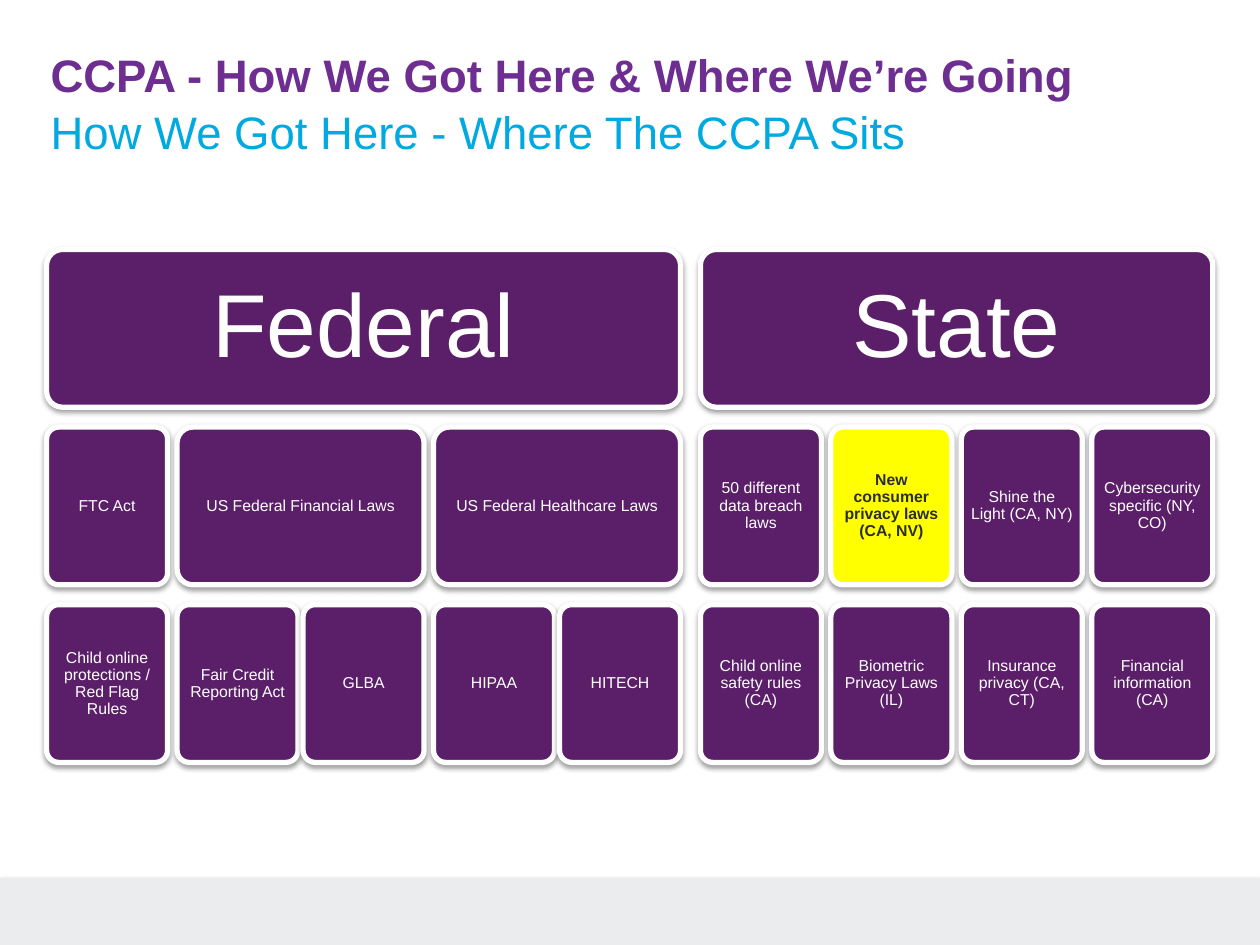
from dataclasses import dataclass

from lxml.etree import SubElement
from pptx import Presentation
from pptx.dml.color import RGBColor
from pptx.enum.shapes import MSO_SHAPE as SHAPE
from pptx.enum.text import MSO_ANCHOR as ANCHOR, PP_ALIGN as ALIGN
from pptx.oxml.ns import qn
from pptx.util import Cm, Pt

PURPLE, YELLOW, WHITE, DARK = "5B1F69", "FFFF00", "FFFFFF", "2B2D2E"
LEFT, TOP = 0.94, 5.03
TILE_W, TILE_H, ROW_PITCH = 2.44, 3.18, 3.58
COLUMN_GAPS = [0.19, 0.1, 0.19, 0.1, 0.4, 0.19, 0.19, 0.19]
COLUMN_X = [LEFT + i * TILE_W + sum(COLUMN_GAPS[:i]) for i in range(len(COLUMN_GAPS) + 1)]


@dataclass
class Tile:
    text: str
    row: int
    col: int
    span: int = 1
    size: int = 9
    inset: float = 0.1
    fill: str = PURPLE
    color: str = WHITE
    bold: bool = False


TILES = [
    Tile("Federal", 0, 0, 5, size=51, inset=0.53),
    Tile("State", 0, 5, 4, size=51, inset=0.53),
    Tile("FTC Act", 1, 0),
    Tile("US Federal Financial Laws", 1, 1, 2),
    Tile("US Federal Healthcare Laws", 1, 3, 2),
    Tile("50 different data breach laws", 1, 5),
    Tile("New consumer privacy laws (CA, NV)", 1, 6, fill=YELLOW, color=DARK, bold=True),
    Tile("Shine the Light (CA, NY)", 1, 7),
    Tile("Cybersecurity specific (NY, CO)", 1, 8),
] + [
    Tile(text, 2, col)
    for col, text in enumerate([
        "Child online protections / Red Flag Rules",
        "Fair Credit Reporting Act",
        "GLBA",
        "HIPAA",
        "HITECH",
        "Child online safety rules (CA)",
        "Biometric Privacy Laws (IL)",
        "Insurance privacy (CA, CT)",
        "Financial information (CA)",
    ])
]


def rgb(value: str) -> RGBColor:
    return RGBColor.from_string(value)


def add_shadow(sp, distance: float, opacity: int) -> None:
    sp.shadow.inherit = False
    effects = sp._element.spPr.find(qn("a:effectLst"))
    shadow = SubElement(effects, qn("a:outerShdw"), blurRad=str(Pt(3.1)),
                        dist=str(Pt(distance)), dir="5400000", rotWithShape="0")
    color = SubElement(shadow, qn("a:srgbClr"), val="000000")
    SubElement(color, qn("a:alpha"), val=str(opacity * 1000))


def write(sp, text: str, size: int, color: str, bold: bool, inset: float = 0):
    tf = sp.text_frame
    tf.word_wrap = True
    tf.margin_left = tf.margin_right = tf.margin_top = tf.margin_bottom = Cm(inset)
    p = tf.paragraphs[0]
    p.text = text
    p.font.name, p.font.size, p.font.bold = "Arial", Pt(size), bold
    p.font.color.rgb = rgb(color)
    return p


def add_heading(s, text: str, y: float, color: str, bold: bool, spacing: float) -> None:
    sp = s.shapes.add_textbox(Cm(1.02), Cm(y), Cm(23.37), Cm(1.09))
    write(sp, text, 26, color, bold).line_spacing = spacing


def add_footer(s) -> None:
    sp = s.shapes.add_shape(SHAPE.RECTANGLE, 0, Cm(17.7), Cm(25.4), Cm(1.35))
    sp.fill.solid()
    sp.fill.fore_color.rgb = rgb("EBECED")
    sp.line.fill.background()
    add_shadow(sp, 1.8, 35)


def add_tile(s, tile: Tile) -> None:
    x = COLUMN_X[tile.col]
    w = COLUMN_X[tile.col + tile.span - 1] + TILE_W - x
    sp = s.shapes.add_shape(SHAPE.ROUNDED_RECTANGLE, Cm(x), Cm(TOP + tile.row * ROW_PITCH),
                            Cm(w), Cm(TILE_H))
    sp.adjustments[0] = 0.1
    sp.fill.solid()
    sp.fill.fore_color.rgb = rgb(tile.fill)
    sp.line.color.rgb = rgb(WHITE)
    sp.line.width = Pt(3)
    add_shadow(sp, 1.6, 38)
    p = write(sp, tile.text, tile.size, tile.color, tile.bold, tile.inset)
    p.alignment, p.line_spacing = ALIGN.CENTER, 0.9
    sp.text_frame.vertical_anchor = ANCHOR.MIDDLE


def main() -> None:
    prs = Presentation()
    prs.slide_width, prs.slide_height = Cm(25.4), Cm(19.05)
    s = prs.slides.add_slide(prs.slide_layouts[6])
    add_footer(s)
    add_heading(s, "CCPA - How We Got Here & Where We’re Going", 0.94, "6E2D91", True, 1.0)
    add_heading(s, "How We Got Here - Where The CCPA Sits", 2.18, "00A9E0", False, 0.95)
    for tile in TILES:
        add_tile(s, tile)
    prs.save("out.pptx")


if __name__ == "__main__":
    main()
